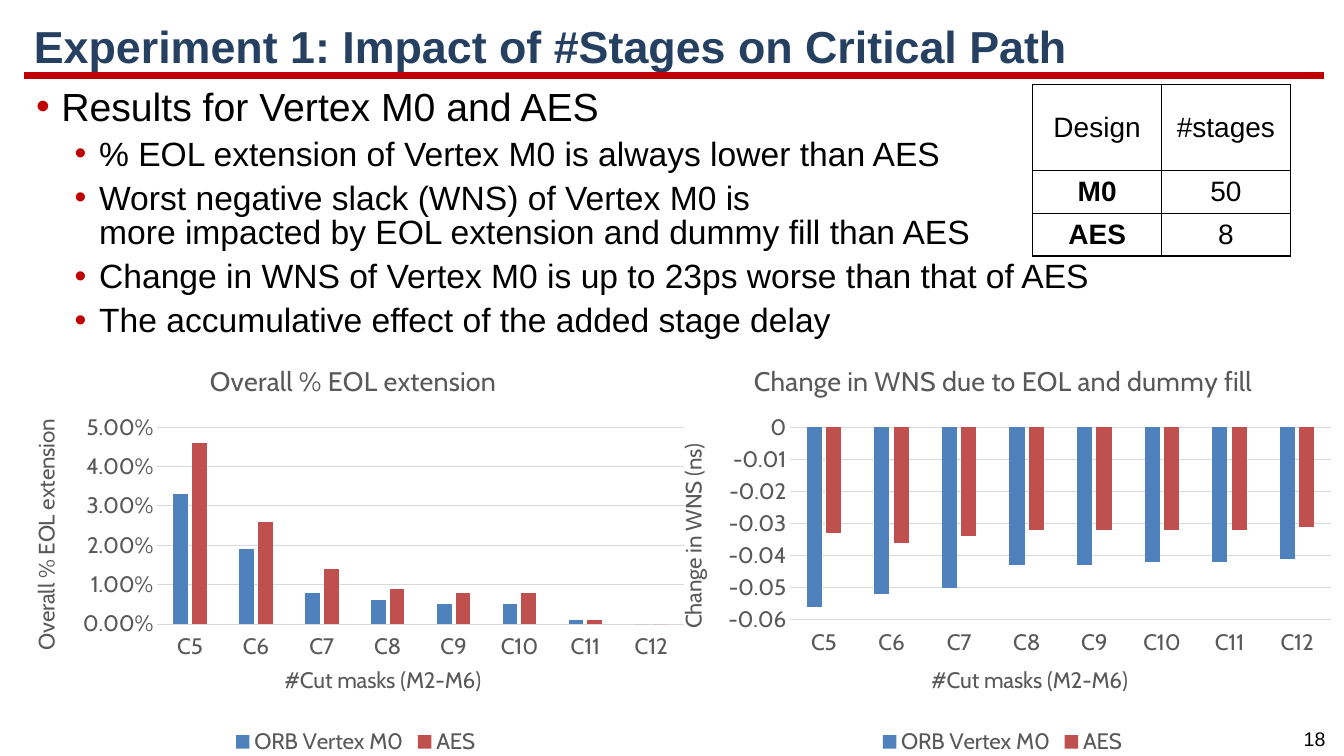
"""Build the slide on how the number of stages affects the critical path."""
from pptx import Presentation
from pptx.chart.data import CategoryChartData
from pptx.dml.color import RGBColor
from pptx.enum.chart import XL_CHART_TYPE, XL_LEGEND_POSITION, XL_TICK_LABEL_POSITION, XL_TICK_MARK
from pptx.enum.shapes import MSO_CONNECTOR
from pptx.enum.text import MSO_ANCHOR, PP_ALIGN
from pptx.oxml import parse_xml
from pptx.oxml.ns import nsdecls
from pptx.util import Pt

BLACK = RGBColor(0x00, 0x00, 0x00)
RED = RGBColor(0xC0, 0x00, 0x00)
NAVY = RGBColor(0x25, 0x40, 0x61)
GRAY = RGBColor(0x59, 0x59, 0x59)
LIGHT_GRAY = RGBColor(0xD9, 0xD9, 0xD9)
SERIES_COLORS = [RGBColor(0x4F, 0x81, 0xBD), RGBColor(0xC0, 0x50, 0x4D)]


def add_span(para, text, size, color=BLACK, bold=False, name="Arial"):
    span = para.add_run()
    span.text = text
    span.font.size = Pt(size)
    span.font.name = name
    span.font.bold = bold
    span.font.color.rgb = color


def set_layout(parent, index, target, **fractions):
    for old in parent.xpath("c:layout"):
        parent.remove(old)
    modes = '<c:xMode val="edge"/><c:yMode val="edge"/>'
    sizes = "".join(f'<c:{key} val="{value}"/>' for key, value in fractions.items())
    parent.insert(index, parse_xml(
        f'<c:layout {nsdecls("c")}><c:manualLayout>{target}{modes}{sizes}</c:manualLayout></c:layout>'))


deck = Presentation()
deck.slide_width, deck.slide_height = Pt(960), Pt(540)
page = deck.slides.add_slide(deck.slide_layouts[5])
shapes = page.shapes

rule = shapes.add_connector(MSO_CONNECTOR.STRAIGHT, Pt(17), Pt(54), Pt(946), Pt(54))
rule.line.color.rgb = RED
rule.line.width = Pt(4.5)
rule._element.spPr.append(parse_xml(f'<a:effectLst {nsdecls("a")}/>'))

title = shapes.title
title.left, title.top, title.width, title.height = Pt(17), Pt(11.5), Pt(930), Pt(47)
title.text_frame.vertical_anchor = MSO_ANCHOR.MIDDLE
para = title.text_frame.paragraphs[0]
para.alignment = PP_ALIGN.LEFT
para.line_spacing = 0.9
add_span(para, "Experiment 1: Impact of #Stages on Critical Path", 32, NAVY, True)

number_box = shapes.add_textbox(Pt(923), Pt(515.5), Pt(32), Pt(24.5))
para = number_box.text_frame.paragraphs[0]
para.alignment = PP_ALIGN.CENTER
add_span(para, "18", 14)

BULLETS = [
    (0, ["Results for Vertex M0 and AES"]),
    (1, ["% EOL extension of Vertex M0 is always lower than AES"]),
    (1, ["Worst negative slack (WNS) of Vertex M0 is",
         "more impacted by EOL extension and dummy fill than AES"]),
    (1, ["Change in WNS of Vertex M0 is up to 23ps worse than that of AES"]),
    (1, ["The accumulative effect of the added stage delay"]),
]
body = shapes.add_textbox(Pt(18.7), Pt(60.2), Pt(927), Pt(185))
frame = body.text_frame
frame.word_wrap = True
for number, (level, lines) in enumerate(BULLETS):
    para = frame.add_paragraph() if number else frame.paragraphs[0]
    para.level = level
    para.line_spacing = 0.85
    para.space_before = Pt(7 if number else 0)
    properties = para._p.get_or_add_pPr()
    properties.set("marL", str(Pt((18, 45)[level])))
    properties.set("indent", str(-Pt((18, 17.5)[level])))
    properties.append(parse_xml(f'<a:buClr {nsdecls("a")}><a:srgbClr val="{RED}"/></a:buClr>'))
    properties.append(parse_xml(f'<a:buFont {nsdecls("a")} typeface="Arial"/>'))
    properties.append(parse_xml(f'<a:buChar {nsdecls("a")} char="•"/>'))
    for position, line in enumerate(lines):
        if position:
            para.add_line_break()
        add_span(para, line, (28, 24)[level])

CATEGORIES = [f"C{masks}" for masks in range(5, 13)]
SERIES_NAMES = ["ORB Vertex M0", "AES"]
CHARTS = [
    dict(left=471.5, title="Change in WNS due to EOL and dummy fill", axis="Change in WNS (ns)",
         format="General", low=-0.06, high=0,
         values=[[-0.056, -0.052, -0.05, -0.043, -0.043, -0.042, -0.042, -0.041],
                 [-0.033, -0.036, -0.034, -0.032, -0.032, -0.032, -0.032, -0.031]],
         plot=dict(x=0.19, y=0.19, w=0.79, h=0.47), title_x=0.13, axis_x=0.02, axis_y=0.22),
    dict(left=9.5, title="Overall % EOL extension", axis="Overall % EOL extension",
         format="0.00%", low=0, high=0.05,
         values=[[0.033, 0.019, 0.008, 0.006, 0.005, 0.005, 0.001, 0],
                 [0.046, 0.026, 0.014, 0.009, 0.008, 0.008, 0.001, 0]],
         plot=dict(x=0.21, y=0.19, w=0.77, h=0.48), title_x=0.28, axis_x=0.02, axis_y=0.16),
]
for item in CHARTS:
    data = CategoryChartData(number_format=item["format"])
    data.categories = CATEGORIES
    for name, values in zip(SERIES_NAMES, item["values"]):
        data.add_series(name, values)
    chart = shapes.add_chart(XL_CHART_TYPE.COLUMN_CLUSTERED, Pt(item["left"]), Pt(249.5),
                             Pt(489), Pt(293), data).chart
    chart.font.name = "Cabin"
    chart.font.size = Pt(16)
    chart.font.color.rgb = GRAY
    chart.has_legend = True
    chart.legend.position = XL_LEGEND_POSITION.BOTTOM
    chart.legend.include_in_layout = False

    plot = chart.plots[0]
    plot.vary_by_categories = False
    plot.gap_width, plot.overlap = 219, -27
    for series, color in zip(plot.series, SERIES_COLORS):
        series.invert_if_negative = False
        series.format.fill.solid()
        series.format.fill.fore_color.rgb = color

    category_axis, value_axis = chart.category_axis, chart.value_axis
    for axis in (category_axis, value_axis):
        axis.major_tick_mark = axis.minor_tick_mark = XL_TICK_MARK.NONE
    category_axis.tick_label_position = XL_TICK_LABEL_POSITION.LOW
    value_axis.minimum_scale, value_axis.maximum_scale = item["low"], item["high"]
    value_axis.major_unit = 0.01
    value_axis.tick_labels.number_format = item["format"]
    value_axis.tick_labels.number_format_is_linked = False
    value_axis.format.line.fill.background()
    for line in (category_axis.format.line, value_axis.major_gridlines.format.line):
        line.color.rgb = LIGHT_GRAY
        line.width = Pt(0.75)

    headings = [
        (chart.chart_title, item["title"], 19.2),
        (category_axis.axis_title, "#Cut masks (M2-M6)", 16),
        (value_axis.axis_title, item["axis"], 16),
    ]
    for heading, text, size in headings:
        add_span(heading.text_frame.paragraphs[0], text, size, GRAY, name="Cabin")
    value_axis.axis_title._element.xpath(".//a:bodyPr")[0].set("rot", "-5400000")

    places = [(item["title_x"], 0.02), (0.39, 0.76), (item["axis_x"], item["axis_y"])]
    for (heading, _, _), (x, y) in zip(headings, places):
        set_layout(heading._element, 1, "", x=x, y=y)
    plot_area = chart._chartSpace.xpath("c:chart/c:plotArea")[0]
    set_layout(plot_area, 0, '<c:layoutTarget val="inner"/>', **item["plot"])

STAGES = [("Design", "#stages"), ("M0", "50"), ("AES", "8")]
table = shapes.add_table(3, 2, Pt(737.7), Pt(60.5), Pt(184), Pt(123)).table
table.first_row = table.horz_banding = False
for column in table.columns:
    column.width = Pt(92)
for row, height in zip(table.rows, (61.5, 30.5, 30.5)):
    row.height = Pt(height)
for row_number, texts in enumerate(STAGES):
    for column_number, text in enumerate(texts):
        cell = table.cell(row_number, column_number)
        cell.vertical_anchor = MSO_ANCHOR.MIDDLE
        cell.margin_top = cell.margin_bottom = Pt(2)
        para = cell.text_frame.paragraphs[0]
        para.alignment = PP_ALIGN.CENTER
        add_span(para, text, 20, bold=row_number > 0 and column_number == 0)
        properties = cell._tc.get_or_add_tcPr()
        for side in ("lnL", "lnR", "lnT", "lnB"):
            properties.append(parse_xml(
                f'<a:{side} {nsdecls("a")} w="{Pt(1)}"><a:solidFill>'
                f'<a:srgbClr val="{BLACK}"/></a:solidFill></a:{side}>'))
        cell.fill.background()

deck.save("out.pptx")
